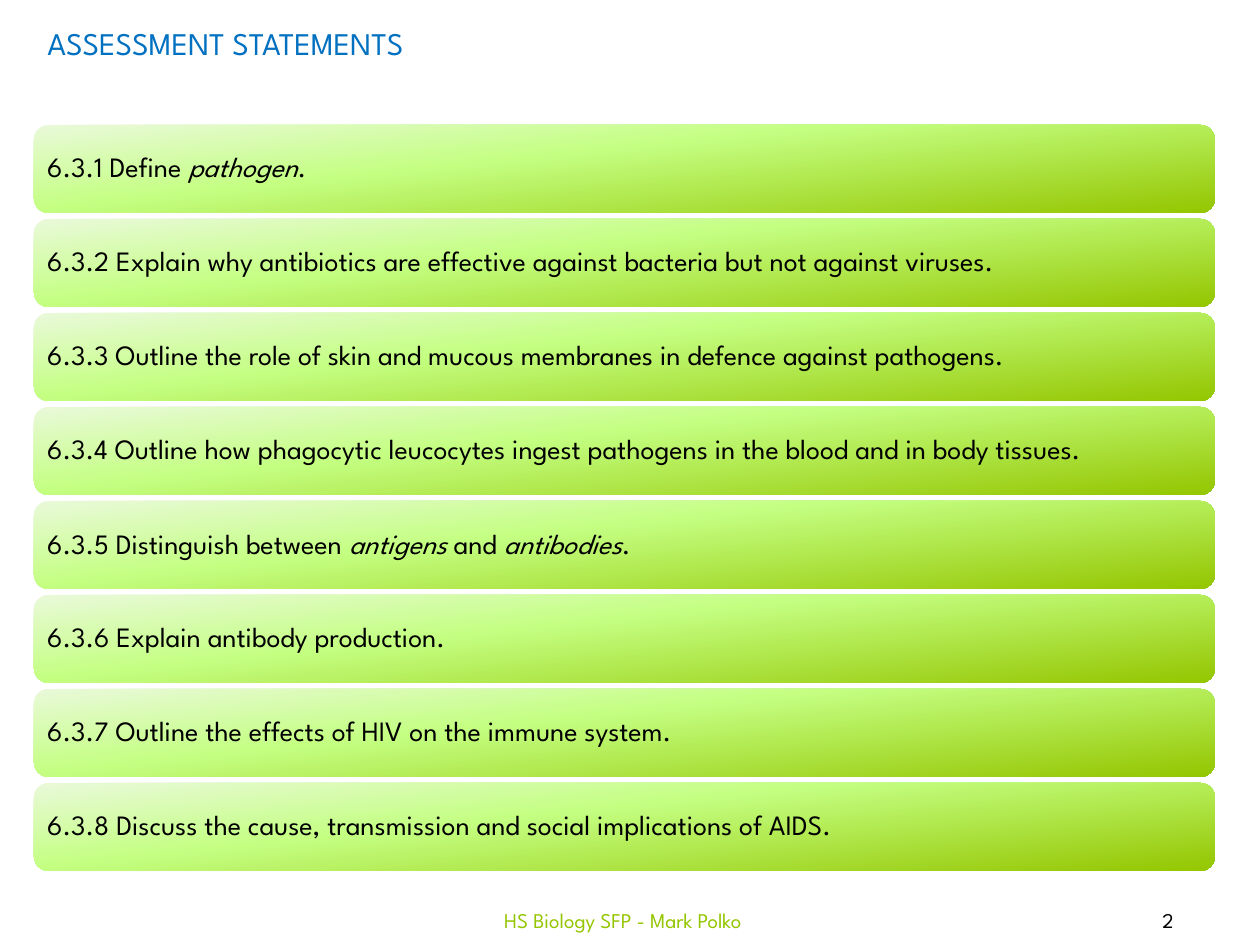
"""Build the assessment statements slide for a biology course."""
from lxml.etree import SubElement
from pptx import Presentation
from pptx.dml.color import RGBColor
from pptx.enum.shapes import MSO_SHAPE as Shape
from pptx.enum.text import MSO_ANCHOR as Anchor, MSO_AUTO_SIZE as AutoSize, PP_ALIGN as Align
from pptx.oxml.ns import qn
from pptx.util import Pt

EMU_PER_PX = 914400 / 126
FONT = "League Spartan"
BLACK, BLUE, GREEN = "000000", "0070C0", "94C600"
BAR_STOPS = [(0, "EAF9DA"), (40, "C4FF82"), (100, GREEN)]
BAR_LEFT, BAR_TOP, BAR_WIDTH, BAR_HEIGHT, BAR_PITCH = 34, 125, 1181, 88, 94
BAR_INSET = 9

STATEMENTS = [
    [("6.3.1 Define ", False), ("pathogen", True), (".", False)],
    [("6.3.2 Explain why antibiotics are effective against bacteria "
      "but not against viruses.", False)],
    [("6.3.3 Outline the role of skin and mucous membranes "
      "in defence against pathogens.", False)],
    [("6.3.4 Outline how phagocytic leucocytes ingest pathogens "
      "in the blood and in body tissues.", False)],
    [("6.3.5 Distinguish between ", False), ("antigens ", True), ("and ", False),
     ("antibodies", True), (".", False)],
    [("6.3.6 Explain antibody production.", False)],
    [("6.3.7 Outline the effects of HIV on the immune system.", False)],
    [("6.3.8 Discuss the cause, transmission and social implications of AIDS.", False)],
]


def px(length):
    """Turn pixels into EMU."""
    return round(length * EMU_PER_PX)


def rgb(color):
    """Turn a hex string into a colour."""
    return RGBColor.from_string(color)


def add_run(paragraph, wording, size, color, italic=False):
    """Add one styled run to a paragraph."""
    run = paragraph.add_run()
    run.text = wording
    run.font.name = FONT
    run.font.size = Pt(size)
    run.font.color.rgb = rgb(color)
    run.font.italic = italic


def add_label(slide, box, wording, size, color, align=Align.LEFT, anchor=Anchor.TOP, wrap=True):
    """Add a text box with a single line."""
    label = slide.shapes.add_textbox(*map(px, box)).text_frame
    label.word_wrap = wrap
    label.auto_size = AutoSize.NONE if wrap else AutoSize.SHAPE_TO_FIT_TEXT
    label.vertical_anchor = anchor
    label.paragraphs[0].alignment = align
    add_run(label.paragraphs[0], wording, size, color)


def fill_gradient(bar, stops, clockwise_angle):
    """Fill a shape with a linear gradient of any number of stops."""
    bar.fill.gradient()
    bar.fill.gradient_angle = 360 - clockwise_angle
    stop_list = next(bar.element.iter(qn("a:gsLst")))
    stop_list.clear()
    for percent, color in stops:
        stop = SubElement(stop_list, qn("a:gs"), pos=str(percent * 1000))
        SubElement(stop, qn("a:srgbClr"), val=color)


def add_statement(slide, top, runs):
    """Add a rounded gradient bar holding one statement."""
    box = (BAR_LEFT, top, BAR_WIDTH, BAR_HEIGHT)
    bar = slide.shapes.add_shape(Shape.ROUNDED_RECTANGLE, *map(px, box))
    bar.shadow.inherit = False
    bar.line.fill.background()
    fill_gradient(bar, BAR_STOPS, 84)
    frame = bar.text_frame
    frame.word_wrap = True
    frame.vertical_anchor = Anchor.MIDDLE
    frame.margin_left = frame.margin_right = px(BAR_INSET)
    frame.margin_top = frame.margin_bottom = px(BAR_INSET)
    statement = frame.paragraphs[0]
    statement.alignment = Align.LEFT
    statement.line_spacing = 0.9
    for wording, italic in runs:
        add_run(statement, wording, 16, BLACK, italic)


def main():
    """Build and save the slide."""
    deck = Presentation()
    deck.slide_width, deck.slide_height = px(1260), px(945)
    slide = deck.slides.add_slide(deck.slide_layouts[6])
    add_label(slide, (1076, 895, 184, 50), "2", 12, BLACK, Align.CENTER, Anchor.MIDDLE)
    add_label(slide, (382, 895, 482, 50), "HS Biology SFP - Mark Polko", 12, GREEN,
              Align.CENTER, Anchor.MIDDLE)
    add_label(slide, (35, 18, 404, 89), "ASSESSMENT STATEMENTS", 18, BLUE, wrap=False)
    for row, runs in enumerate(STATEMENTS):
        add_statement(slide, BAR_TOP + row * BAR_PITCH, runs)
    deck.save("out.pptx")


if __name__ == "__main__":
    main()
